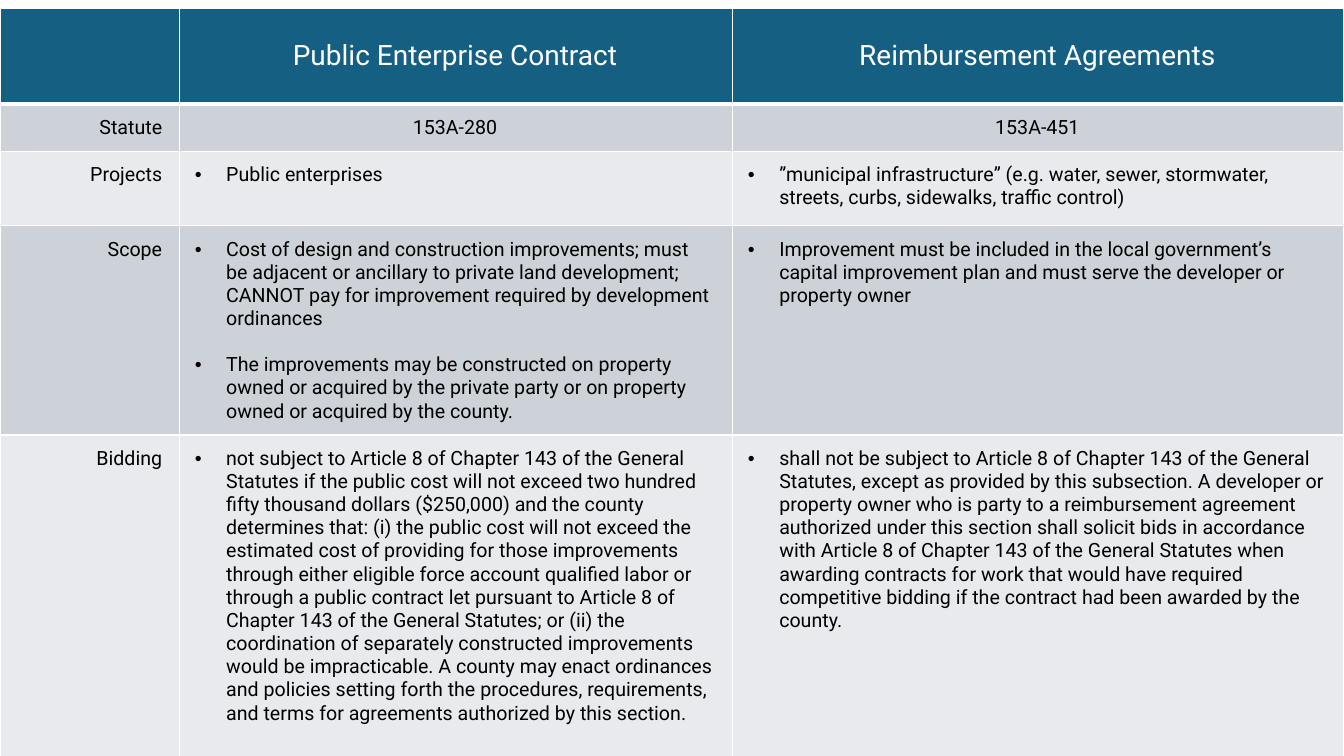
from lxml import etree
from pptx import Presentation
from pptx.dml.color import RGBColor
from pptx.enum.text import MSO_ANCHOR, PP_ALIGN
from pptx.oxml.ns import qn
from pptx.util import Cm, Pt

CENTER, LEFT, RIGHT = PP_ALIGN.CENTER, PP_ALIGN.LEFT, PP_ALIGN.RIGHT
MIDDLE, TOP = MSO_ANCHOR.MIDDLE, MSO_ANCHOR.TOP

FONT = "Roboto"
COLORS = {
    "header": "156082",
    "band_dark": "CCD2D8",
    "band_light": "E8EAED",
    "white": "FFFFFF",
    "text": "000000",
}
COLUMN_WIDTHS = [4.52, 13.94, 15.41]
ROW_HEIGHTS = [2.42, 1.19, 1.88, 5.27, 8.39]
BULLET_INDENT = Cm(0.79)

HEADINGS = ["", "Public Enterprise Contract", "Reimbursement Agreements"]
STATUTES = ["Statute", "153A-280", "153A-451"]
COMPARISONS = [
    (
        "Projects",
        ["Public enterprises"],
        ["”municipal infrastructure” (e.g. water, sewer, stormwater, streets, "
         "curbs, sidewalks, traffic control)"],
    ),
    (
        "Scope",
        ["Cost of design and construction improvements; must be adjacent or "
         "ancillary to private land development; CANNOT pay for improvement "
         "required by development ordinances",
         "The improvements may be constructed on property owned or acquired by "
         "the private party or on property owned or acquired by the county."],
        ["Improvement must be included in the local government’s capital "
         "improvement plan and must serve the developer or property owner"],
    ),
    (
        "Bidding",
        ["not subject to Article 8 of Chapter 143 of the General Statutes if the "
         "public cost will not exceed two hundred fifty thousand dollars "
         "($250,000) and the county determines that: (i) the public cost will "
         "not exceed the estimated cost of providing for those improvements "
         "through either eligible force account qualified labor or through a "
         "public contract let pursuant to Article 8 of Chapter 143 of the General "
         "Statutes; or (ii) the coordination of separately constructed "
         "improvements would be impracticable. A county may enact ordinances and "
         "policies setting forth the procedures, requirements, and terms for "
         "agreements authorized by this section."],
        ["shall not be subject to Article 8 of Chapter 143 of the General "
         "Statutes, except as provided by this subsection. A developer or "
         "property owner who is party to a reimbursement agreement authorized "
         "under this section shall solicit bids in accordance with Article 8 of "
         "Chapter 143 of the General Statutes when awarding contracts for work "
         "that would have required competitive bidding if the contract had been "
         "awarded by the county."],
    ),
]


def set_borders(cell, top, bottom):
    """Draw white borders, with the top and bottom widths in points."""
    properties = cell._tc.get_or_add_tcPr()
    widths = {"a:lnL": 1, "a:lnR": 1, "a:lnT": top, "a:lnB": bottom}
    for position, (tag, width) in enumerate(widths.items()):
        line = etree.Element(qn(tag), w=str(Pt(width)))
        fill = etree.SubElement(line, qn("a:solidFill"))
        etree.SubElement(fill, qn("a:srgbClr"), val=COLORS["white"])
        properties.insert(position, line)


def add_bullet(paragraph):
    """Give a paragraph a hanging round bullet."""
    properties = paragraph._p.get_or_add_pPr()
    properties.set("marL", str(BULLET_INDENT))
    properties.set("indent", str(-BULLET_INDENT))
    etree.SubElement(properties, qn("a:buFont"), typeface="Arial")
    etree.SubElement(properties, qn("a:buChar"), char="•")


def write_paragraph(paragraph, text, size, color, align):
    """Write one formatted run in a paragraph."""
    paragraph.alignment = align
    run = paragraph.add_run()
    run.text = text
    run.font.name = FONT
    run.font.size = Pt(size)
    run.font.bold = False
    run.font.color.rgb = RGBColor.from_string(COLORS[color])


def style_cell(cell, fill, anchor=TOP, top=1, bottom=1):
    """Set the fill, margins, anchor and borders of a cell."""
    cell.fill.solid()
    cell.fill.fore_color.rgb = RGBColor.from_string(COLORS[fill])
    cell.margin_left, cell.margin_right = Cm(0.39), Cm(0.43)
    cell.margin_top = cell.margin_bottom = Cm(0.3)
    cell.vertical_anchor = anchor
    set_borders(cell, top, bottom)


def write_bullets(cell, items):
    """Fill a cell with bulleted paragraphs, one line apart."""
    frame = cell.text_frame
    for index, item in enumerate(items):
        paragraph = frame.add_paragraph() if index else frame.paragraphs[0]
        if index:
            paragraph.space_before = Pt(16.5)
        write_paragraph(paragraph, item, 14, "text", LEFT)
        add_bullet(paragraph)


def fill_header(table):
    """Fill the heading row."""
    for column, heading in enumerate(HEADINGS):
        cell = table.cell(0, column)
        style_cell(cell, "header", MIDDLE, bottom=3)
        if heading:
            write_paragraph(cell.text_frame.paragraphs[0], heading, 20, "white", CENTER)


def fill_body(table):
    """Fill the statute row and the bulleted comparison rows."""
    for row, contents in enumerate([STATUTES, *COMPARISONS], start=1):
        band = "band_dark" if row % 2 else "band_light"
        for column, content in enumerate(contents):
            cell = table.cell(row, column)
            style_cell(cell, band, top=3 if row == 1 else 1)
            if isinstance(content, list):
                write_bullets(cell, content)
            else:
                align = CENTER if column else RIGHT
                write_paragraph(cell.text_frame.paragraphs[0], content, 14, "text", align)


def add_comparison_table(slide):
    """Add the table with its column widths and row heights."""
    table = slide.shapes.add_table(
        len(ROW_HEIGHTS), len(COLUMN_WIDTHS), Cm(0), Cm(0.2),
        Cm(sum(COLUMN_WIDTHS)), Cm(sum(ROW_HEIGHTS)),
    ).table
    for column, width in zip(table.columns, COLUMN_WIDTHS):
        column.width = Cm(width)
    for row, height in zip(table.rows, ROW_HEIGHTS):
        row.height = Cm(height)
    return table


def main():
    """Build the slide and save it."""
    presentation = Presentation()
    presentation.slide_width, presentation.slide_height = Cm(33.87), Cm(19.05)
    slide = presentation.slides.add_slide(presentation.slide_layouts[6])
    table = add_comparison_table(slide)
    fill_header(table)
    fill_body(table)
    presentation.save("out.pptx")


if __name__ == "__main__":
    main()
